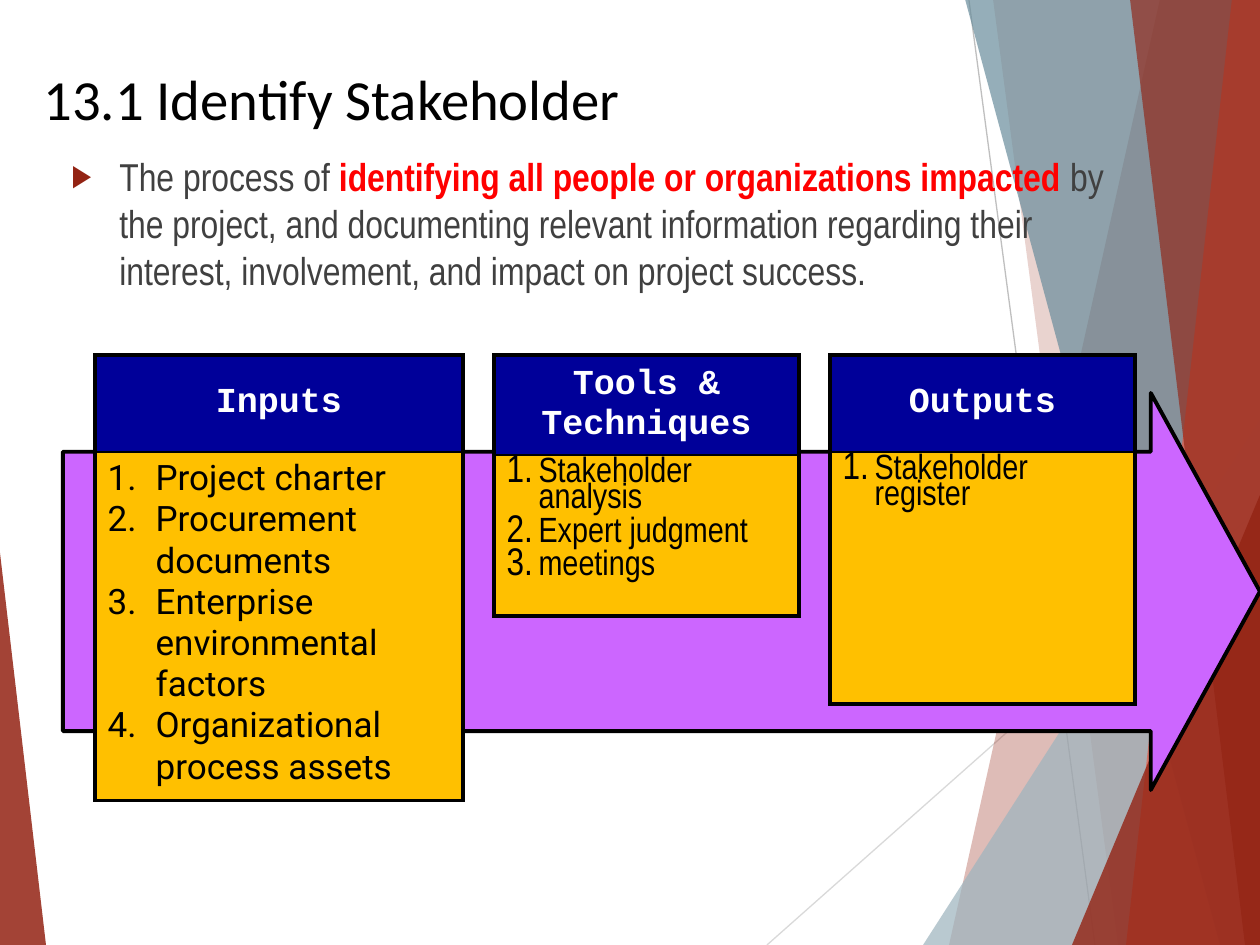
from lxml import etree
from pptx import Presentation
from pptx import util as u
from pptx.dml import color
from pptx.enum import shapes, text
from pptx.oxml import ns

PX = 914400 / 126
WIDTH, HEIGHT = 1260, 945
DARK_RED, BLACK, WHITE = "932313", "000000", "FFFFFF"


def px(*lengths):
    return [u.Emu(round(length * PX)) for length in lengths]


def add_xml(parent, tag, **attributes):
    return etree.SubElement(parent, ns.qn("a:" + tag), attributes)


rgb = color.RGBColor.from_string
deck = Presentation()
deck.slide_width, deck.slide_height = px(WIDTH, HEIGHT)
page = deck.slides.add_slide(deck.slide_layouts[6])

# Background rays
for start, end, tone in [((969, 0), (1095, HEIGHT), "BFBFBF"),
                         ((WIDTH, 508), (767, HEIGHT), "D9D9D9")]:
    ray = page.shapes.add_connector(shapes.MSO_CONNECTOR.STRAIGHT, *px(*start, *end))
    ray.line.color.rgb = rgb(tone)
    ray.line.width = u.Pt(0.75)
    add_xml(ray._element.spPr, "effectLst")

# Facets: a band is (top x, bottom x) up to the right edge,
# a triangle is (left, top, width, apex position)
facets = [
    ("band", (1160, 949), DARK_RED, 30),
    ("band", (993, 1118), DARK_RED, 20),
    ("triangle", (923, 420, 337, 1), "9EB5BF", 72),
    ("band", (965, 1220), "698D9C", 70),
    ("band", (1232, 1126), "E75C48", 70),
    ("band", (1130, 1245), DARK_RED, 65),
    ("triangle", (1072, 495, 188, 1), DARK_RED, 80),
    ("triangle", (0, 553, 46, 0), DARK_RED, 85),
]
for kind, place, tone, opacity in facets:
    if kind == "band":
        top_x, bottom_x = place
        outline = page.shapes.build_freeform(top_x, -1, scale=PX)
        outline.add_line_segments([(WIDTH, -1), (WIDTH, HEIGHT), (bottom_x, HEIGHT)])
        facet = outline.convert_to_shape()
    else:
        left, top, width, apex = place
        facet = page.shapes.add_shape(shapes.MSO_SHAPE.ISOSCELES_TRIANGLE,
                                      *px(left, top, width, HEIGHT - top))
        facet.adjustments[0] = apex
    facet.shadow.inherit = False
    facet.fill.solid()
    facet.fill.fore_color.rgb = rgb(tone)
    facet.line.fill.background()
    solid = facet._element.spPr.find(ns.qn("a:solidFill"))
    add_xml(solid[0], "alpha", val=str(opacity * 1000))

arrow = page.shapes.add_shape(shapes.MSO_SHAPE.RIGHT_ARROW, *px(63, 393, 1197, 397))
arrow.adjustments[0], arrow.adjustments[1] = 0.704, 0.275
arrow.shadow.inherit = False
arrow.fill.solid()
arrow.fill.fore_color.rgb = rgb("CC66FF")
arrow.line.color.rgb = rgb(BLACK)
arrow.line.width = u.Pt(2.25)

# Title and definition
text_boxes = [
    ((31, 54, 1050, 53), 10, [("13.1 Identify Stakeholder", "Calibri", 32.4, BLACK, False)]),
    ((59, 147, 1081, 189), 6, [
        ("The process of ", "Arial Narrow", 22.2, "404040", False),
        ("identifying all people or organizations impacted ", "Arial Narrow", 22.2, "FF0000", True),
        ("by the project, and documenting relevant information regarding their interest, "
         "involvement, and impact on project success.", "Arial Narrow", 22.2, "404040", False)]),
]
for place, inset, spans in text_boxes:
    box = page.shapes.add_textbox(*px(*place))
    box.text_frame.word_wrap = True
    box.text_frame.margin_top = px(inset)[0]
    para = box.text_frame.paragraphs[0]
    for words, font, size, tone, bold in spans:
        span = para.add_run()
        span.text = words
        for name, value in dict(name=font, size=u.Pt(size), bold=bold).items():
            setattr(span.font, name, value)
        span.font.color.rgb = rgb(tone)

props = para._p.get_or_add_pPr()
hang = px(48)[0]
props.set("marL", str(hang))
props.set("indent", str(-hang))
add_xml(add_xml(props, "buClr"), "srgbClr", val=DARK_RED)
add_xml(props, "buSzPct", val="80000")
add_xml(props, "buFont", typeface="Arial")
add_xml(props, "buChar", char="▶")

# Process tables: left, width, row heights, heading, list font, hanging indent, items
tables = [
    (95, 368, (97, 343), "Inputs", "Roboto", 48,
     ["Project charter", "Procurement documents", "Enterprise environmental factors",
      "Organizational process assets"]),
    (494, 305, (100, 158), "Tools & Techniques", "Arial Narrow", 32,
     ["Stakeholder analysis", "Expert judgment", "meetings"]),
    (830, 305, (97, 252), "Outputs", "Arial Narrow", 32, ["Stakeholder register"]),
]
for left, width, heights, heading, list_font, indent, items in tables:
    frame = page.shapes.add_table(2, 1, *px(left, 355, width, sum(heights)))
    table = frame.table
    rows = [([heading], "Courier New", WHITE, "000099"),
            (items, list_font, BLACK, "FFC000")]
    for index, (lines, font, tone, fill) in enumerate(rows):
        is_heading = index == 0
        table.rows[index].height = px(heights[index])[0]
        cell = table.cell(index, 0)
        cell.vertical_anchor = text.MSO_ANCHOR.MIDDLE if is_heading else text.MSO_ANCHOR.TOP
        thin_side = "lnB" if is_heading else "lnT"
        for side in ("lnL", "lnR", "lnT", "lnB"):
            weight = u.Pt(1 if side == thin_side else 2.25)
            border = add_xml(cell._tc.get_or_add_tcPr(), side, w=str(weight))
            add_xml(add_xml(border, "solidFill"), "srgbClr", val=BLACK)
        cell.fill.solid()
        cell.fill.fore_color.rgb = rgb(fill)
        cell.text_frame.text = "\n".join(lines)
        for para in cell.text_frame.paragraphs:
            for name, value in dict(name=font, size=u.Pt(20), bold=is_heading).items():
                setattr(para.runs[0].font, name, value)
            para.runs[0].font.color.rgb = rgb(tone)
            if is_heading:
                para.alignment = text.PP_ALIGN.CENTER
                continue
            props = para._p.get_or_add_pPr()
            hang = px(indent)[0]
            props.set("marL", str(hang))
            props.set("indent", str(-hang))
            if list_font == "Arial Narrow":
                para.line_spacing = 0.8
                para.space_before = u.Pt(4)
                add_xml(props, "buSzPct", val="110000")
            add_xml(props, "buFont", typeface=list_font)
            add_xml(props, "buAutoNum", type="arabicPeriod")

deck.save("out.pptx")
